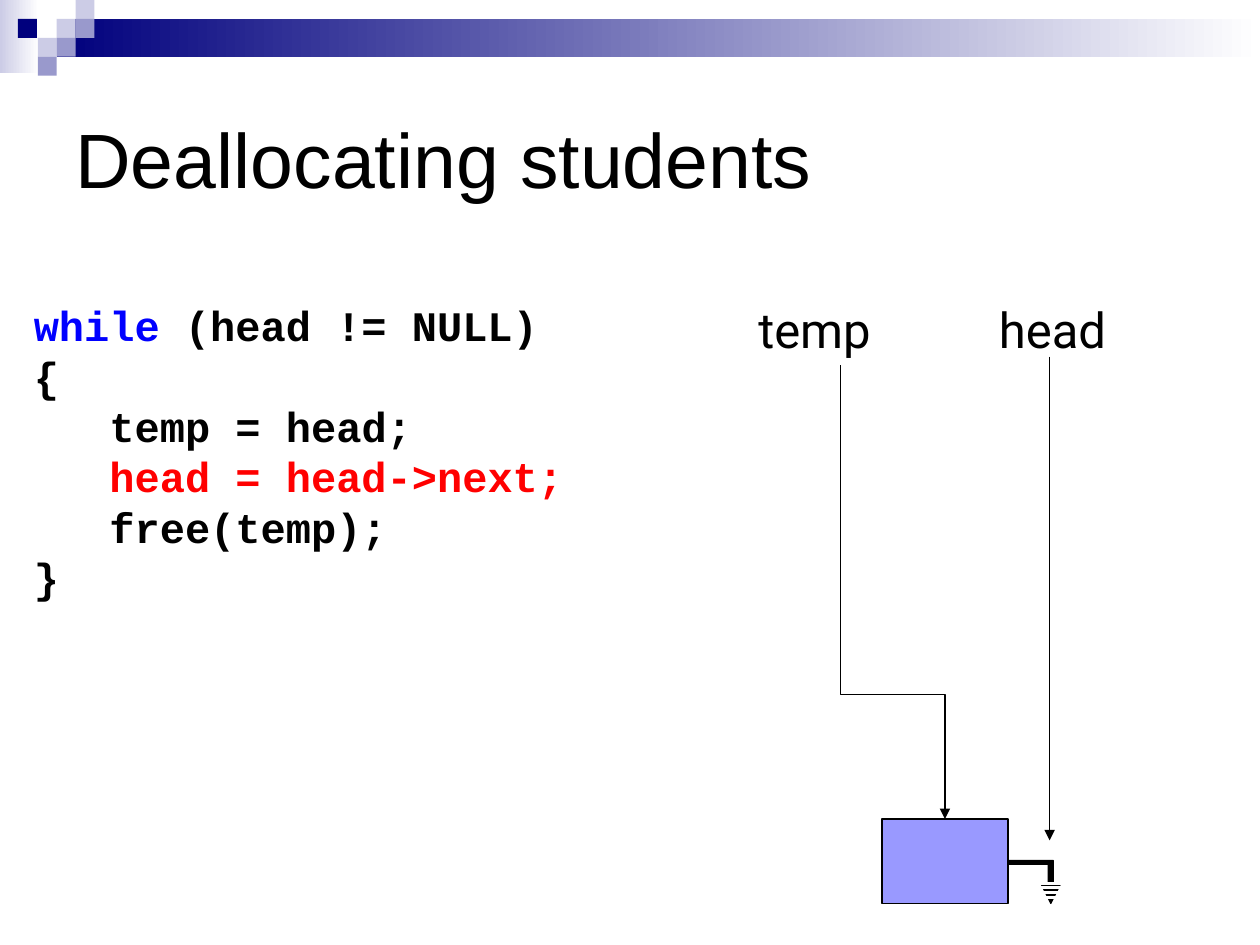
from lxml import etree
from pptx import Presentation
from pptx.dml.color import RGBColor
from pptx.enum.shapes import MSO_CONNECTOR, MSO_SHAPE
from pptx.enum.text import MSO_ANCHOR
from pptx.oxml.ns import qn
from pptx.util import Inches, Pt

RECTANGLE = MSO_SHAPE.RECTANGLE
STRAIGHT, ELBOW = MSO_CONNECTOR.STRAIGHT, MSO_CONNECTOR.ELBOW
MIDDLE, TOP = MSO_ANCHOR.MIDDLE, MSO_ANCHOR.TOP

WIDTH, HEIGHT = 10, 7.5
TILE = 0.15  # side of one square in the header mosaic
BLACK, WHITE, NAVY = "000000", "FFFFFF", "00007D"
PALE, MID, NODE = "CCCCE6", "9999CC", "9999FF"
KEYWORD, CURRENT = "0000FF", "FF0000"


def color(hex_text):
    return RGBColor.from_string(hex_text)


def outline(shape, line_color, width=0.75):
    shape.line.color.rgb = color(line_color)
    shape.line.width = Pt(width)


def add_box(page, left, top, width, height, fill, fade_to=None, line=None):
    box = page.shapes.add_shape(RECTANGLE, *map(Inches, (left, top, width, height)))
    box.shadow.inherit = False
    if fade_to:
        box.fill.gradient()
        box.fill.gradient_angle = 0
        for stop, shade, place in zip(box.fill.gradient_stops, (fill, fade_to), (0, 1)):
            stop.color.rgb = color(shade)
            stop.position = place
    else:
        box.fill.solid()
        box.fill.fore_color.rgb = color(fill)
    if line:
        outline(box, line)
    else:
        box.line.fill.background()
    return box


def add_text(page, lines, left, top, width, height, *, font, size, bold=False, anchor=TOP):
    """Each line is a list of (text, color) spans."""
    box = page.shapes.add_textbox(*map(Inches, (left, top, width, height)))
    frame = box.text_frame
    frame.word_wrap = True
    frame.vertical_anchor = anchor
    for index, spans in enumerate(lines):
        para = frame.add_paragraph() if index else frame.paragraphs[0]
        for text, shade in spans:
            span = para.add_run()
            span.text = text
            span.font.name = font
            span.font.size = Pt(size)
            span.font.bold = bold
            span.font.color.rgb = color(shade)


def add_line(page, start, end, line_color=BLACK, width=0.75, kind=STRAIGHT, arrow=False):
    line = page.shapes.add_connector(kind, *map(Inches, (*start, *end)))
    outline(line, line_color, width)
    if arrow:
        etree.SubElement(line.line._get_or_add_ln(), qn("a:tailEnd"), type="triangle")
    etree.SubElement(line._element.spPr, qn("a:effectLst"))
    return line


def add_drop_elbow(page, start, end, bend):
    """Down, across, down: a sideways elbow turned by 270 degrees."""
    (x1, y1), (x2, y2) = start, end
    mid_x, mid_y = (x1 + x2) / 2, (y1 + y2) / 2
    half_run, half_step = (y2 - y1) / 2, (x2 - x1) / 2
    line = add_line(page, (mid_x + half_run, mid_y - half_step),
                    (mid_x - half_run, mid_y + half_step), kind=ELBOW, arrow=True)
    properties = line._element.spPr
    properties.find(qn("a:xfrm")).set("rot", str(270 * 60000))
    guides = properties.find(qn("a:prstGeom")).get_or_add_avLst()
    etree.SubElement(guides, qn("a:gd"), name="adj1", fmla=f"val {round(bend * 100000)}")


def add_header(page):
    add_box(page, 0, 0, 0.31, 0.58, PALE, fade_to=WHITE)
    add_box(page, 3 * TILE, TILE, WIDTH - 3 * TILE, 2 * TILE, NAVY, fade_to=WHITE)
    tiles = [(3, 1, PALE), (4, 0, PALE), (4, 1, MID), (2, 2, PALE),
             (0.95, 1, NAVY), (3, 2, MID), (2, 3, MID)]
    for column, row, fill in tiles:
        add_box(page, column * TILE, row * TILE, TILE, TILE, fill)


def add_ground(page):
    """The null pointer: a wire into a striped triangle."""
    points = [(8.34, 7.17), (8.26, 7.01), (8.32, 7.01), (8.32, 6.86), (8, 6.86),
              (8, 6.83), (8.36, 6.83), (8.36, 7.01), (8.42, 7.01)]
    first, *others = [(Inches(x), Inches(y)) for x, y in points]
    builder = page.shapes.build_freeform(*first)
    builder.add_line_segments(others, close=True)
    wire = builder.convert_to_shape()
    wire.shadow.inherit = False
    wire.fill.solid()
    wire.fill.fore_color.rgb = color(BLACK)
    outline(wire, BLACK)
    for stripe in range(4):
        y = 7.01 + stripe * 0.11 / 3
        add_line(page, (8.17, y), (8.5, y), WHITE, 1.75)


def main():
    deck = Presentation()
    deck.slide_width, deck.slide_height = Inches(WIDTH), Inches(HEIGHT)
    page = deck.slides.add_slide(deck.slide_layouts[6])

    # Header and title
    add_header(page)
    add_text(page, [[("Deallocating students", BLACK)]], 0.5, 0.5, 9, 1.5,
             font="Arial", size=44, anchor=MIDDLE)

    # Last list node with its two pointers
    add_box(page, 7, 6.5, 1, 0.67, NODE, line=BLACK)
    for name, left, width in (("head", 7.83, 1.08), ("temp", 5.92, 1.5)):
        add_text(page, [[(name, BLACK)]], left, 2.33, width, 0.57, font="Roboto", size=28)
    add_drop_elbow(page, (6.67, 2.9), (7.5, 6.5), bend=0.726)
    add_ground(page)
    add_line(page, (8.33, 2.83), (8.33, 6.67), arrow=True)

    # Code
    code = [
        [("while ", KEYWORD), ("(head != NULL)", BLACK)],
        [("{", BLACK)],
        [("   temp = head;", BLACK)],
        [("   ", BLACK), ("head = head->next;", CURRENT)],
        [("   free(temp);", BLACK)],
        [("}", BLACK)],
    ]
    add_text(page, code, 0.17, 2.33, 5, 2.5, font="Courier New", size=24, bold=True)

    deck.save("out.pptx")


if __name__ == "__main__":
    main()
